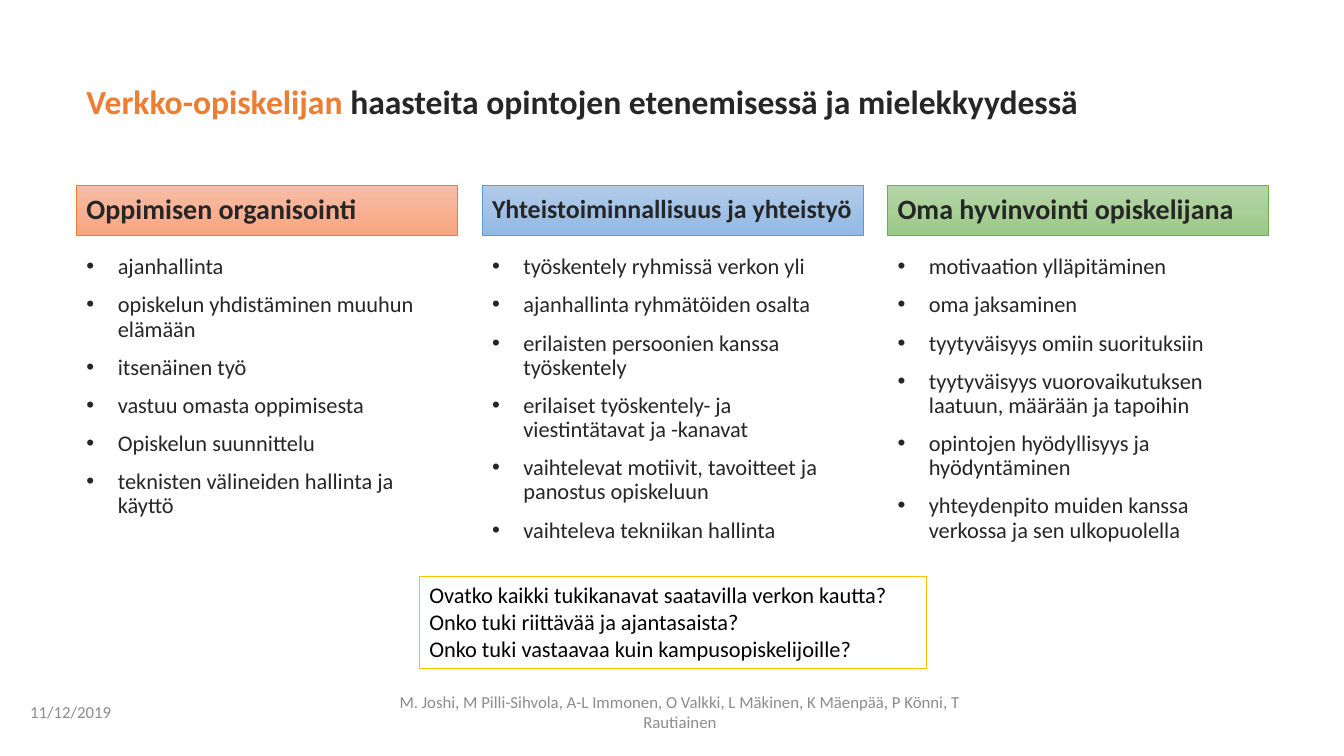
from lxml.etree import SubElement
from pptx import Presentation
from pptx.dml.color import RGBColor
from pptx.enum.shapes import MSO_SHAPE
from pptx.enum.text import MSO_ANCHOR, PP_ALIGN
from pptx.oxml.ns import qn
from pptx.util import Cm, Pt

FONT = "Calibri"
WHITE = RGBColor(0xFF, 0xFF, 0xFF)
BLACK = RGBColor(0x00, 0x00, 0x00)
DARK = RGBColor(0x26, 0x26, 0x26)
GREY = RGBColor(0x8C, 0x8C, 0x8C)
GOLD = RGBColor(0xFF, 0xC0, 0x00)
ORANGE = RGBColor(0xED, 0x7D, 0x31)
ORANGE_TOP = RGBColor(0xF7, 0xBD, 0xA5)
ORANGE_BOTTOM = RGBColor(0xF8, 0xA5, 0x82)
BLUE = RGBColor(0x5B, 0x9B, 0xD5)
BLUE_TOP = RGBColor(0xB1, 0xCB, 0xE9)
BLUE_BOTTOM = RGBColor(0x93, 0xB9, 0xE4)
GREEN = RGBColor(0x70, 0xAD, 0x47)
GREEN_TOP = RGBColor(0xB5, 0xD5, 0xA7)
GREEN_BOTTOM = RGBColor(0x9C, 0xC9, 0x87)

MARGIN = 1.93
COLUMN_WIDTH = 9.6
COLUMN_PITCH = 10.22

# heading, heading size, (line, gradient top, gradient bottom), challenges
THEMES = [
    ("Oppimisen organisointi", 20, (ORANGE, ORANGE_TOP, ORANGE_BOTTOM), [
        "ajanhallinta",
        "opiskelun yhdistäminen muuhun elämään",
        "itsenäinen työ",
        "vastuu omasta oppimisesta",
        "Opiskelun suunnittelu",
        "teknisten välineiden hallinta ja käyttö",
    ]),
    ("Yhteistoiminnallisuus ja yhteistyö", 18.5, (BLUE, BLUE_TOP, BLUE_BOTTOM), [
        "työskentely ryhmissä verkon yli",
        "ajanhallinta ryhmätöiden osalta",
        "erilaisten persoonien kanssa työskentely",
        "erilaiset työskentely- ja viestintätavat ja -kanavat",
        "vaihtelevat motiivit, tavoitteet ja panostus opiskeluun",
        "vaihteleva tekniikan hallinta",
    ]),
    ("Oma hyvinvointi opiskelijana", 20, (GREEN, GREEN_TOP, GREEN_BOTTOM), [
        "motivaation ylläpitäminen",
        "oma jaksaminen",
        "tyytyväisyys omiin suorituksiin",
        "tyytyväisyys vuorovaikutuksen laatuun, määrään ja tapoihin",
        "opintojen hyödyllisyys ja hyödyntäminen",
        "yhteydenpito muiden kanssa verkossa ja sen ulkopuolella",
    ]),
]

SUPPORT_QUESTIONS = [
    "Ovatko kaikki tukikanavat saatavilla verkon kautta?",
    "Onko tuki riittävää ja ajantasaista?",
    "Onko tuki vastaavaa kuin kampusopiskelijoille?",
]

AUTHORS = ("M. Joshi, M Pilli-Sihvola, A-L Immonen, O Valkki, L Mäkinen, "
           "K Mäenpää, P Könni, T Rautiainen")


def write(holder, paragraphs, size=16, color=DARK, bold=False, align=PP_ALIGN.LEFT,
          anchor=MSO_ANCHOR.TOP, line_spacing=1.0, gap=0, bullet=False):
    """Fill a shape with paragraphs, each a string or a list of (text, colour) runs."""
    frame = holder.text_frame
    frame.word_wrap = True
    frame.vertical_anchor = anchor
    for index, content in enumerate(paragraphs):
        paragraph = frame.add_paragraph() if index else frame.paragraphs[0]
        paragraph.alignment = align
        paragraph.line_spacing = line_spacing
        paragraph.space_before = Pt(gap if index else 0)
        if bullet:
            add_bullet(paragraph)
        runs = [(content, color)] if isinstance(content, str) else content
        for text, run_color in runs:
            run = paragraph.add_run()
            run.text = text
            run.font.name = FONT
            run.font.size = Pt(size)
            run.font.bold = bold
            run.font.color.rgb = run_color


def add_bullet(paragraph, indent=Cm(0.79)):
    properties = paragraph._p.get_or_add_pPr()
    properties.set("marL", str(indent))
    properties.set("indent", str(-indent))
    SubElement(properties, qn("a:buFont")).set("typeface", "Arial")
    SubElement(properties, qn("a:buChar")).set("char", "•")


def add_text(slide, left, top, width, height, paragraphs, **text_format):
    box = slide.shapes.add_textbox(Cm(left), Cm(top), Cm(width), Cm(height))
    write(box, paragraphs, **text_format)


def add_framed_box(slide, left, top, width, height, line_color, line_width):
    box = slide.shapes.add_shape(MSO_SHAPE.RECTANGLE, Cm(left), Cm(top), Cm(width), Cm(height))
    box.shadow.inherit = False
    box.line.color.rgb = line_color
    box.line.width = Pt(line_width)
    return box


def add_title(slide, left, top, width, height):
    title = [("Verkko-opiskelijan", ORANGE),
             (" haasteita opintojen etenemisessä ja mielekkyydessä", DARK)]
    add_text(slide, left, top, width, height, [title], size=24, bold=True, line_spacing=0.9)


def add_theme(slide, left, top, width, heading, heading_size, colors, challenges):
    """Place a heading bar with its bulleted challenges below."""
    line_color, *gradient_colors = colors
    bar = add_framed_box(slide, left, top, width, 1.25, line_color, 0.5)
    bar.fill.gradient()
    bar.fill.gradient_angle = 270
    for stop, color in zip(bar.fill.gradient_stops, gradient_colors):
        stop.color.rgb = color
    write(bar, [heading], size=heading_size, bold=True,
          anchor=MSO_ANCHOR.MIDDLE, line_spacing=0.9)
    add_text(slide, left, top + 1.63, width, 8.81, challenges,
             line_spacing=0.9, gap=10, bullet=True)


def add_support_questions(slide, left, top, width, height):
    box = add_framed_box(slide, left, top, width, height, GOLD, 1)
    box.fill.solid()
    box.fill.fore_color.rgb = WHITE
    write(box, SUPPORT_QUESTIONS, color=BLACK)


def add_footer(slide, left, top, height):
    small = dict(size=12, color=GREY, anchor=MSO_ANCHOR.MIDDLE)
    add_text(slide, left, top, 7.62, height, ["11/12/2019"], **small)
    add_text(slide, left + 8.89, top, 15.47, height, [AUTHORS], align=PP_ALIGN.CENTER, **small)


def main():
    presentation = Presentation()
    presentation.slide_width = Cm(33.87)
    presentation.slide_height = Cm(19.05)
    slide = presentation.slides.add_slide(presentation.slide_layouts[6])
    add_title(slide, MARGIN, 2.03, 30.05, 1.17)
    for index, theme in enumerate(THEMES):
        add_theme(slide, MARGIN + index * COLUMN_PITCH, 4.68, COLUMN_WIDTH, *theme)
    add_support_questions(slide, 10.57, 14.53, 12.78, 2.31)
    add_footer(slide, 0.51, 17.42, 1.02)
    presentation.save("out.pptx")


if __name__ == "__main__":
    main()
